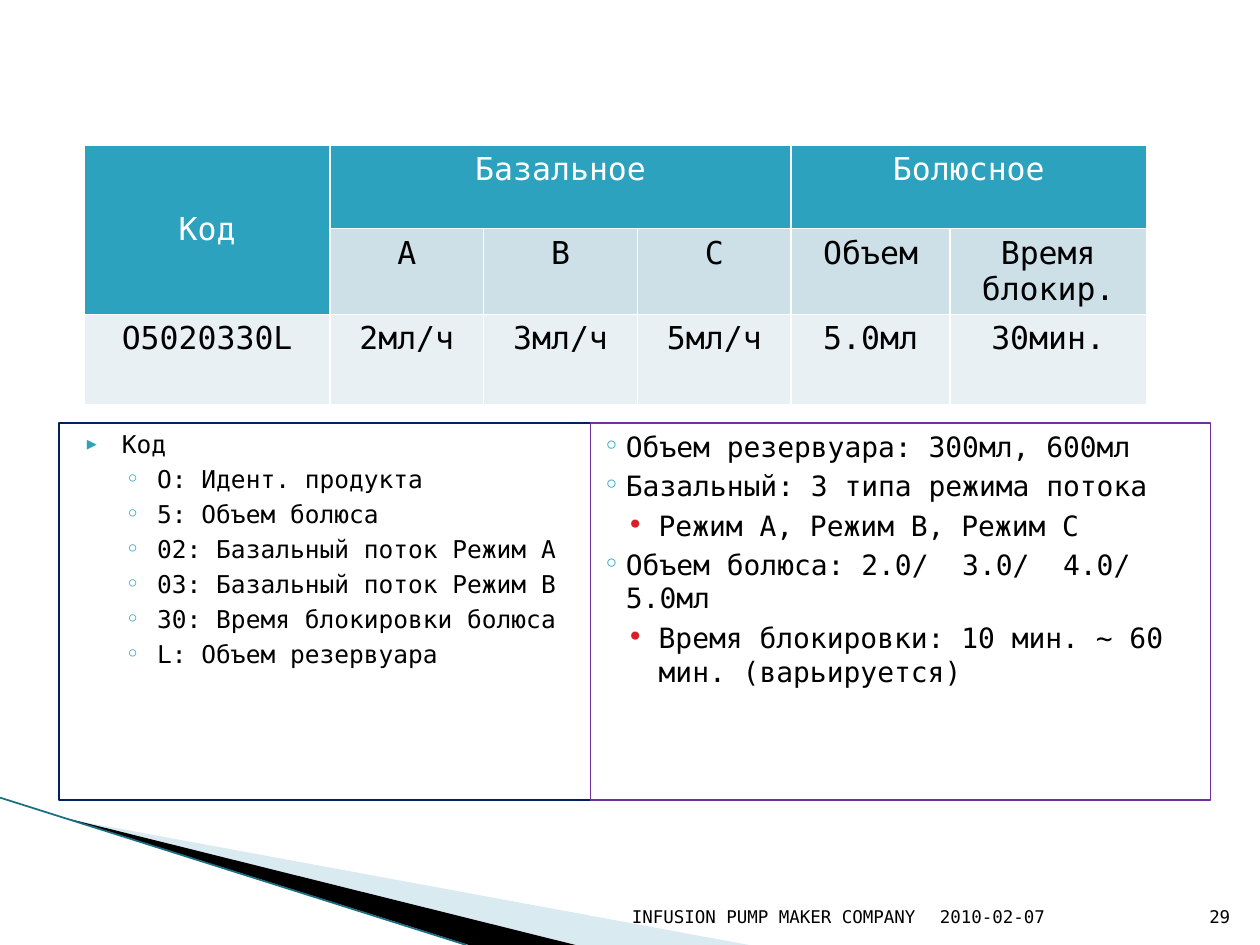
from dataclasses import dataclass
from typing import Optional

from lxml.etree import SubElement
from pptx import Presentation
from pptx.dml.color import RGBColor
from pptx.enum.shapes import MSO_CONNECTOR, MSO_SHAPE
from pptx.enum.text import MSO_ANCHOR, PP_ALIGN
from pptx.oxml.ns import qn
from pptx.util import Cm, Pt


@dataclass(frozen=True)
class Theme:
    font: str = "DejaVu Sans Mono"
    ink: str = "000000"
    white: str = "FFFFFF"
    teal: str = "2DA2BF"
    red: str = "DA1F28"
    navy: str = "002060"
    violet: str = "7030A0"
    band: str = "CDE0E8"
    pale: str = "E8F0F4"
    wedge: str = "A0CBDC"
    edge: str = "1B6E82"
    head: int = 18
    note: int = 16
    list: int = 14
    foot: int = 10


@dataclass(frozen=True)
class Bullet:
    mark: str
    color: str
    left: float
    hang: float
    space: float
    level: int = 0
    scale: Optional[int] = None


@dataclass(frozen=True)
class Panel:
    left: float
    width: float
    line: str
    size: int
    items: tuple


@dataclass(frozen=True)
class Cell:
    row: int
    col: int
    text: str
    fill: str
    rows: int = 1
    cols: int = 1


@dataclass(frozen=True)
class Foot:
    left: float
    width: float
    text: str
    align: PP_ALIGN


T = Theme()


def rgb(color: str) -> RGBColor:
    return RGBColor.from_string(color)


def add_mark(para, b: Bullet) -> None:
    props = para._p.get_or_add_pPr()
    props.set("marL", str(Cm(b.left)))
    props.set("indent", str(Cm(-b.hang)))
    SubElement(SubElement(props, qn("a:buClr")), qn("a:srgbClr")).set("val", b.color)
    if b.scale:
        SubElement(props, qn("a:buSzPct")).set("val", str(b.scale * 1000))
    SubElement(props, qn("a:buFont")).set("typeface", T.font)
    SubElement(props, qn("a:buChar")).set("char", b.mark)
    para.level = b.level


def write(frame, text: str, *, size: int, color: str = T.ink, align=PP_ALIGN.LEFT,
          bullet: Optional[Bullet] = None, first: bool = True) -> None:
    para = frame.paragraphs[0] if first else frame.add_paragraph()
    if bullet:
        add_mark(para, bullet)
    para.space_before = Pt(bullet.space if bullet and not first else 0)
    para.alignment = align
    run = para.add_run()
    run.text = text
    run.font.name, run.font.size = T.font, Pt(size)
    run.font.color.rgb = rgb(color)


def draw_wedge(slide, points: list, color: str, alpha: int = 100) -> None:
    start, *rest = [(Cm(x), Cm(y)) for x, y in points]
    form = slide.shapes.build_freeform(*start)
    form.add_line_segments(rest, close=True)
    shape = form.convert_to_shape()
    shape.shadow.inherit = False
    shape.fill.solid()
    shape.fill.fore_color.rgb = rgb(color)
    shape.line.fill.background()
    if alpha < 100:
        tint = shape._element.spPr.find(".//" + qn("a:srgbClr"))
        SubElement(tint, qn("a:alpha")).set("val", str(alpha * 1000))


def draw_edge(slide) -> None:
    line = slide.shapes.add_connector(MSO_CONNECTOR.STRAIGHT, 0, Cm(16.08), Cm(9.4), Cm(19.05))
    line.line.color.rgb, line.line.width = rgb(T.edge), Pt(1)
    SubElement(line._element.spPr, qn("a:effectLst"))


def draw_panel(slide, p: Panel) -> None:
    box = slide.shapes.add_shape(MSO_SHAPE.RECTANGLE, Cm(p.left), Cm(8.53), Cm(p.width), Cm(7.6))
    box.shadow.inherit = False
    box.fill.background()
    box.line.color.rgb, box.line.width = rgb(p.line), Pt(0.75)
    frame = box.text_frame
    frame.word_wrap, frame.vertical_anchor = True, MSO_ANCHOR.TOP
    for i, (bullet, text) in enumerate(p.items):
        write(frame, text, size=p.size, bullet=bullet, first=i == 0)


def draw_foot(slide, f: Foot) -> None:
    frame = slide.shapes.add_textbox(Cm(f.left), Cm(17.8), Cm(f.width), Cm(1.02)).text_frame
    frame.word_wrap, frame.vertical_anchor = True, MSO_ANCHOR.BOTTOM
    write(frame, f.text, size=T.foot, align=f.align)


def add_rules(cell) -> None:
    props = cell._tc.get_or_add_tcPr()
    for side in ("lnL", "lnR", "lnT", "lnB"):
        line = SubElement(props, qn("a:" + side), w=str(Pt(1)))
        SubElement(SubElement(line, qn("a:solidFill")), qn("a:srgbClr")).set("val", T.white)


def draw_table(slide, cols: list, rows: list, cells: list) -> None:
    table = slide.shapes.add_table(len(rows), len(cols), Cm(1.7), Cm(2.93),
                                   Cm(sum(cols)), Cm(sum(rows))).table
    for col, width in zip(table.columns, cols):
        col.width = Cm(width)
    for row, height in zip(table.rows, rows):
        row.height = Cm(height)
    for cell in table.iter_cells():
        add_rules(cell)
    for c in cells:
        cell = table.cell(c.row, c.col)
        if c.rows * c.cols > 1:
            cell.merge(table.cell(c.row + c.rows - 1, c.col + c.cols - 1))
        cell.fill.solid()
        cell.fill.fore_color.rgb = rgb(c.fill)
        cell.vertical_anchor = MSO_ANCHOR.MIDDLE if c.rows > 1 else MSO_ANCHOR.TOP
        write(cell.text_frame, c.text, size=T.head, align=PP_ALIGN.CENTER,
              color=T.white if c.fill == T.teal else T.ink)


def main() -> None:
    deck = Presentation()
    deck.slide_width, deck.slide_height = Cm(25.4), Cm(19.05)
    slide = deck.slides.add_slide(deck.slide_layouts[6])

    # Corner wedges
    draw_wedge(slide, [(1.4, 16.52), (15.1, 19.05), (11.58, 19.05)], T.wedge, 40)
    draw_wedge(slide, [(1.36, 16.5), (11.6, 19.05), (9.45, 19.05)], T.ink)
    draw_edge(slide)

    # Code table
    heads = [Cell(0, 0, "Код", T.teal, rows=2), Cell(0, 1, "Базальное", T.teal, cols=3),
             Cell(0, 4, "Болюсное", T.teal, cols=2)]
    names = [Cell(1, i, text, T.band) for i, text in
             enumerate(("A", "B", "C", "Объем", "Время блокир."), 1)]
    values = [Cell(2, i, text, T.pale) for i, text in
              enumerate(("O5020330L", "2мл/ч", "3мл/ч", "5мл/ч", "5.0мл", "30мин."))]
    draw_table(slide, [4.95, 3.1, 3.1, 3.1, 3.2, 3.96], [1.68, 1.68, 1.83],
               heads + names + values)

    # Lists below the table
    top = Bullet("▶", T.teal, 1.02, 0.71, 4, scale=68)
    sub = Bullet("◦", T.teal, 1.73, 0.64, 3.2, level=1)
    main_pt = Bullet("◦", T.teal, 0.46, 0.64, 3.2)
    dot = Bullet("•", T.red, 1.12, 0.64, 3.5, level=1)
    parts = ("O: Идент. продукта", "5: Объем болюса", "02: Базальный поток Режим A",
             "03: Базальный поток Режим В", "30: Время блокировки болюса",
             "L: Объем резервуара")
    facts = ((main_pt, "Объем резервуара: 300мл, 600мл"),
             (main_pt, "Базальный: 3 типа режима потока"),
             (dot, "Режим A, Режим B, Режим C"),
             (main_pt, "Объем болюса: 2.0/  3.0/  4.0/ 5.0мл"),
             (dot, "Время блокировки: 10 мин. ~ 60 мин. (варьируется)"))
    codes = ((top, "Код"), *((sub, text) for text in parts))
    for panel in (Panel(1.19, 10.72, T.navy, T.list, codes),
                  Panel(11.91, 12.5, T.violet, T.note, facts)):
        draw_panel(slide, panel)

    # Footer
    for foot in (Foot(12.17, 6.53, "INFUSION PUMP MAKER COMPANY", PP_ALIGN.RIGHT),
                 Foot(18.7, 5.33, "2010-02-07", PP_ALIGN.LEFT),
                 Foot(24.03, 1.02, "29", PP_ALIGN.RIGHT)):
        draw_foot(slide, foot)

    deck.save("out.pptx")


if __name__ == "__main__":
    main()
